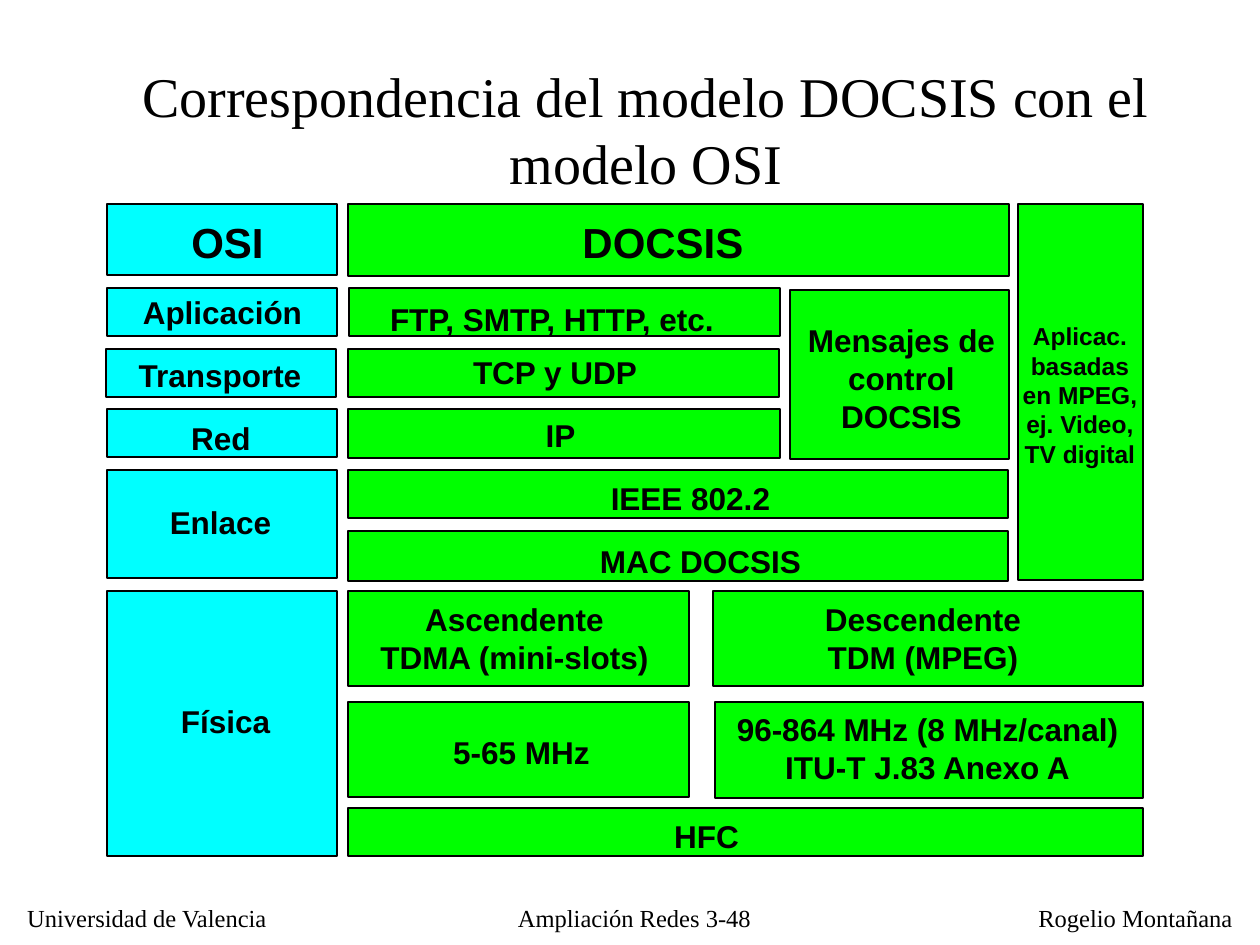
from pptx import Presentation
from pptx.dml.color import RGBColor
from pptx.enum.shapes import MSO_SHAPE as Shape
from pptx.enum.text import MSO_AUTO_SIZE as Fit, PP_ALIGN as Align
from pptx.util import Emu, Pt

PX = 914400 // 126
SLACK = 8  # spare room on each side of a one-line label
BLACK = RGBColor(0, 0, 0)
CYAN = RGBColor(0, 255, 255)
GREEN = RGBColor(0, 255, 0)
SANS = "Arial"
SERIF = "Times New Roman"

# Layer boxes: left, top, width, height
OSI_BOXES = [
    (107, 204, 230, 71),
    (107, 288, 230, 48),
    (106, 349, 230, 48),
    (107, 409, 230, 48),
    (107, 470, 230, 108),
    (107, 591, 230, 265),
]
DOCSIS_BOXES = [
    (348, 808, 795, 48),
    (348, 702, 341, 95),
    (348, 591, 341, 95),
    (715, 702, 428, 96),
    (713, 591, 430, 95),
    (348, 531, 660, 50),
    (348, 470, 660, 48),
    (348, 409, 432, 49),
    (348, 349, 431, 48),
    (349, 288, 431, 48),
    (790, 290, 219, 169),
    (1018, 204, 125, 376),
    (348, 204, 661, 72),
]

# One-line labels: text, left, top, width
HEADS = [("OSI", 179, 210, 97), ("DOCSIS", 570, 210, 186)]
LABELS = [
    ("Aplicación", 130, 287, 185),
    ("Transporte", 125, 350, 190),
    ("Red", 179, 413, 84),
    ("Enlace", 157, 497, 127),
    ("Física", 168, 696, 115),
    ("FTP, SMTP, HTTP, etc.", 371, 294, 362),
    ("TCP y UDP", 460, 347, 190),
    ("IP", 533, 410, 55),
    ("IEEE 802.2", 598, 473, 185),
    ("MAC DOCSIS", 587, 536, 227),
    ("HFC", 661, 811, 91),
    ("5-65 MHz", 441, 727, 161),
]

# Labels of several lines: lines, box, wrap, size
BLOCKS = [
    (["96-864 MHz (8 MHz/canal) ITU-T J.83 Anexo A"],
     (711, 704, 433, 88), True, 18),
    (["Ascendente", "TDMA (mini-slots)"], (367, 594, 295, 88), False, 18),
    (["Descendente", "TDM (MPEG)"], (812, 594, 222, 88), False, 18),
    (["Mensajes de control DOCSIS"], (785, 315, 233, 126), True, 18),
    (["Aplicac. basadas en MPEG, ej. Video, TV digital"],
     (1005, 315, 150, 159), True, 14),
]

# Footer: text, left, width
FOOTER = [
    ("Universidad de Valencia", 13, 268),
    ("Ampliación Redes 3-48", 481, 307),
    ("Rogelio Montañana", 1026, 219),
]


def scale(box):
    return [Emu(n * PX) for n in box]


def add_box(slide, box, fill):
    rect = slide.shapes.add_shape(Shape.RECTANGLE, *scale(box))
    rect.shadow.inherit = False
    rect.fill.solid()
    rect.fill.fore_color.rgb = fill
    rect.line.color.rgb = BLACK
    rect.line.width = Pt(0.75)


def add_text(slide, lines, box, size, font=SANS, bold=True, wrap=False):
    frame = slide.shapes.add_textbox(*scale(box)).text_frame
    frame.word_wrap = wrap
    frame.auto_size = Fit.SHAPE_TO_FIT_TEXT
    for i, line in enumerate(lines):
        para = frame.add_paragraph() if i else frame.paragraphs[0]
        para.alignment = Align.CENTER
        run = para.add_run()
        run.text = line
        run.font.name = font
        run.font.size = Pt(size)
        run.font.bold = bold
        run.font.color.rgb = BLACK


def add_label(slide, text, left, top, wide, high, size, font=SANS, bold=True):
    box = (left - SLACK, top, wide + 2 * SLACK, high)
    add_text(slide, [text], box, size, font, bold)


def main():
    deck = Presentation()
    deck.slide_width, deck.slide_height = scale((1260, 945))
    slide = deck.slides.add_slide(deck.slide_layouts[6])

    # Title
    add_text(slide, ["Correspondencia del modelo DOCSIS con el modelo OSI"],
             (84, 55, 1124, 147), 32, SERIF, False, True)

    # Layers of both models
    for boxes, fill in ((DOCSIS_BOXES, GREEN), (OSI_BOXES, CYAN)):
        for box in boxes:
            add_box(slide, box, fill)

    # Labels over the layers
    for labels, high, size in ((HEADS, 63, 24), (LABELS, 50, 18)):
        for text, left, top, wide in labels:
            add_label(slide, text, left, top, wide, high, size)
    for lines, box, wrap, size in BLOCKS:
        add_text(slide, lines, box, size, wrap=wrap)

    # Footer
    for text, left, wide in FOOTER:
        add_label(slide, text, left, 897, wide, 42, 14, SERIF, False)

    deck.save("out.pptx")


if __name__ == "__main__":
    main()
